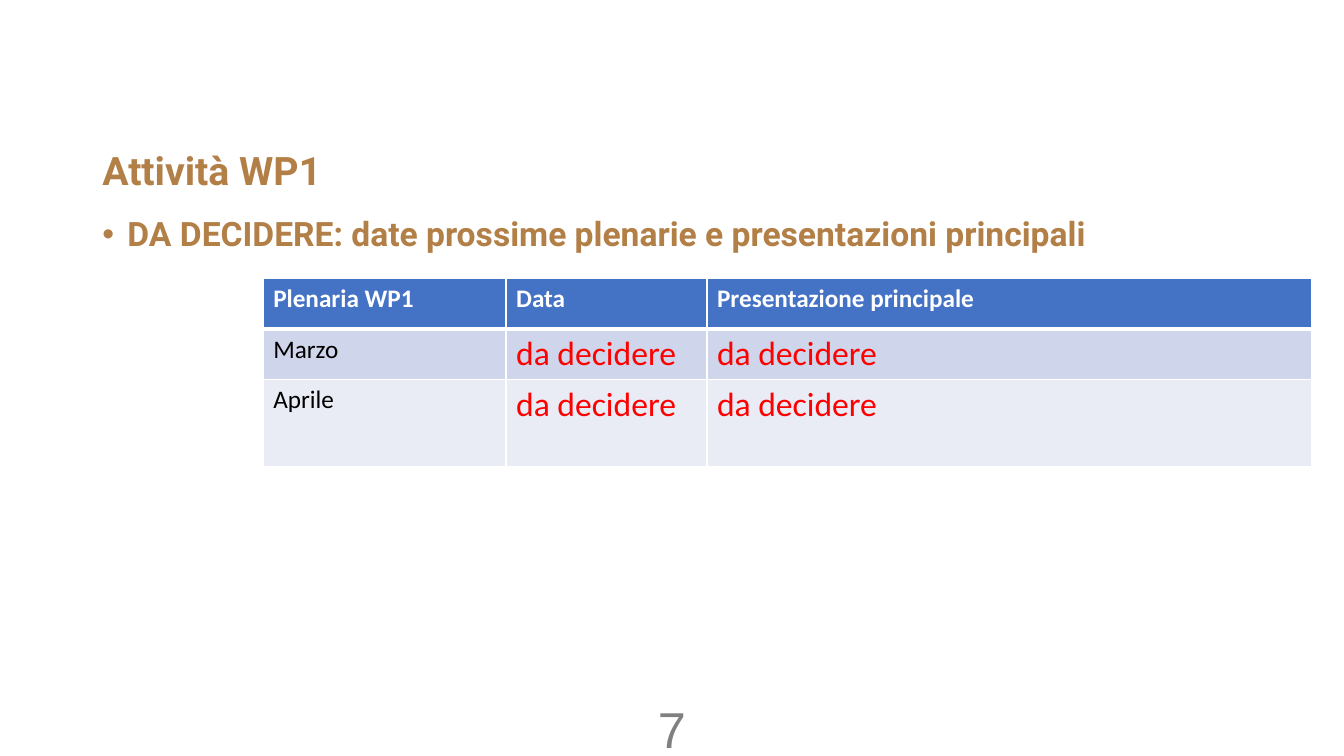
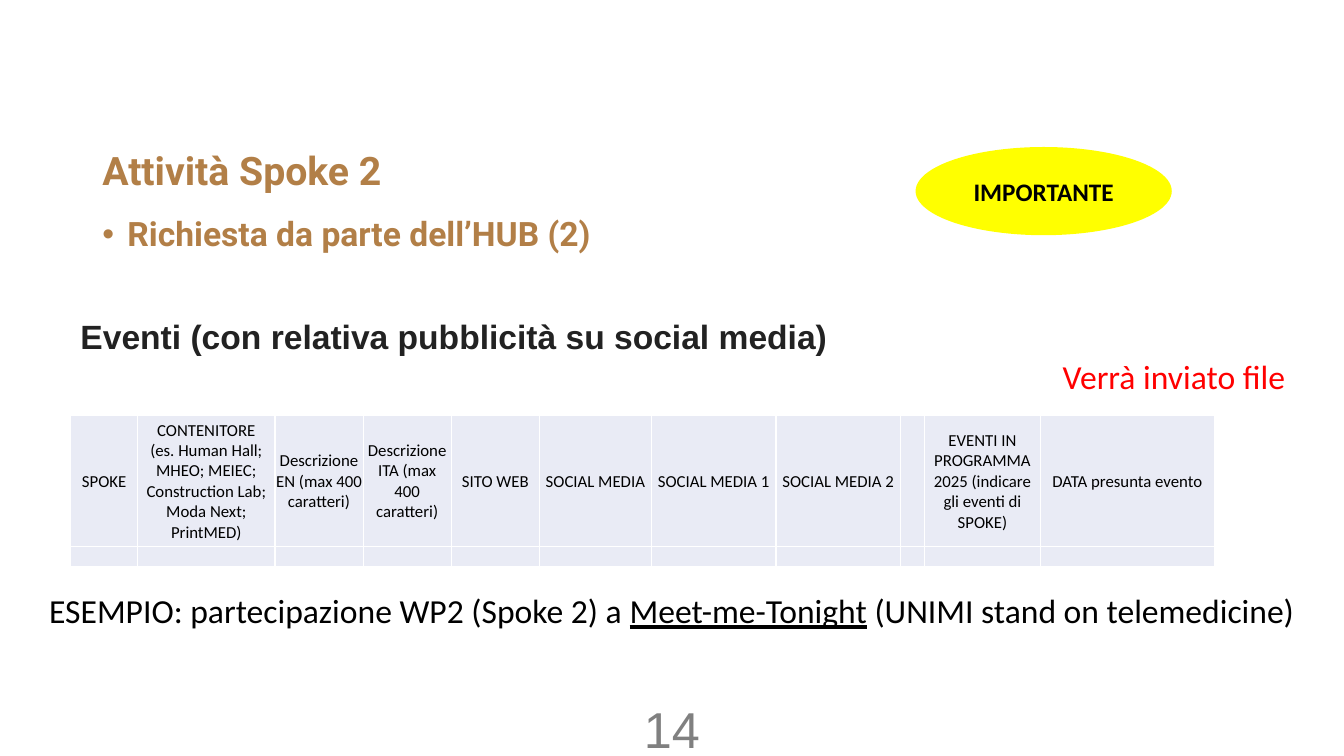
from lxml.etree import SubElement
from pptx import Presentation
from pptx.dml.color import RGBColor
from pptx.enum.shapes import MSO_SHAPE
from pptx.enum.text import MSO_ANCHOR, PP_ALIGN
from pptx.oxml.ns import qn
from pptx.util import Pt

GOLD, RED, BLACK, WHITE = "B27F47", "FF0000", "000000", "FFFFFF"
GREY, INK, YELLOW = "808080", "222222", "FFFF00"
BLUE, BAND, LIGHT = "4472C4", "CFD5EA", "E9EBF5"

TITLE = {"name": "Roboto", "size": Pt(28), "bold": True, "color": GOLD}
BULLET = TITLE | {"size": Pt(24)}
NUMBER = {"name": "Arial", "size": Pt(36), "color": GREY}
HEADING = {"name": "Arial", "size": Pt(24), "bold": True, "color": INK}
BODY = {"name": "Calibri", "size": Pt(18), "bold": False, "color": BLACK}
STRONG = BODY | {"bold": True}
HEADER = STRONG | {"color": WHITE}
LARGE = BODY | {"size": Pt(24)}
ALERT = LARGE | {"color": RED}
SMALL = BODY | {"size": Pt(12)}


def rgb(value):
    return RGBColor.from_string(value)


def set_format(font, text_format):
    for name, value in text_format.items():
        if name == "color":
            font.color.rgb = rgb(value)
        else:
            setattr(font, name, value)


def write(paragraph, text, text_format):
    for index, line in enumerate(text.split("\n")):
        if index:
            paragraph.add_line_break()
        run = paragraph.add_run()
        run.text = line
        set_format(run.font, text_format)


def add_text(slide, box, text, text_format, align=PP_ALIGN.LEFT,
             anchor=MSO_ANCHOR.TOP, wrap=True):
    frame = slide.shapes.add_textbox(*map(Pt, box)).text_frame
    frame.word_wrap = wrap
    frame.vertical_anchor = anchor
    paragraph = frame.paragraphs[0]
    paragraph.alignment = align
    write(paragraph, text, text_format)
    return paragraph


def add_bullet(paragraph):
    properties = paragraph._p.get_or_add_pPr()
    properties.set("marL", str(Pt(18)))
    properties.set("indent", str(-Pt(18)))
    SubElement(properties, qn("a:buFont"), typeface="Arial")
    SubElement(properties, qn("a:buChar"), char="•")


def add_frame(presentation, title, topic, number):
    slide = presentation.slides.add_slide(presentation.slide_layouts[6])
    heading = add_text(slide, (66, 105, 828, 43), title, TITLE)
    heading.line_spacing = 0.9
    add_text(slide, (372, 506, 216, 29), number, NUMBER,
             PP_ALIGN.CENTER, MSO_ANCHOR.MIDDLE)
    bullet = add_text(slide, (66, 152, 828, 35), topic, BULLET)
    add_bullet(bullet)
    bullet.line_spacing = 0.9
    return slide


def add_badge(slide, box, text):
    shape = slide.shapes.add_shape(MSO_SHAPE.OVAL, *map(Pt, box))
    shape.shadow.inherit = False
    shape.fill.solid()
    shape.fill.fore_color.rgb = rgb(YELLOW)
    shape.line.fill.background()
    shape.text_frame.vertical_anchor = MSO_ANCHOR.MIDDLE
    paragraph = shape.text_frame.paragraphs[0]
    paragraph.alignment = PP_ALIGN.CENTER
    write(paragraph, text, STRONG)


def set_cell(cell, color, top=1, bottom=1):
    properties = cell._tc.get_or_add_tcPr()
    for side, width in (("L", 1), ("R", 1), ("T", top), ("B", bottom)):
        line = SubElement(properties, qn(f"a:ln{side}"), w=str(Pt(width)))
        fill = SubElement(line, qn("a:solidFill"))
        SubElement(fill, qn("a:srgbClr"), val=WHITE)
    cell.fill.solid()
    cell.fill.fore_color.rgb = rgb(color)


def add_grid(slide, left, top, widths, heights, has_header):
    shape = slide.shapes.add_table(
        len(heights), len(widths), Pt(left), Pt(top),
        Pt(sum(widths)), Pt(sum(heights)))
    table = shape.table
    table.first_row = has_header
    table.horz_banding = False
    for column, width in zip(table.columns, widths):
        column.width = Pt(width)
    for row, height in zip(table.rows, heights):
        row.height = Pt(height)
    return table


def add_plenary_table(slide):
    rows = [
        ("Plenaria WP1", "Data", "Presentazione principale"),
        ("Marzo", "da decidere", "da decidere"),
        ("Aprile", "da decidere", "da decidere"),
    ]
    styles = [
        (BLUE, HEADER, HEADER, 1, 3),
        (BAND, BODY, ALERT, 3, 1),
        (LIGHT, BODY, ALERT, 1, 1),
    ]
    table = add_grid(slide, 188, 199, (173.5, 143.5, 432), (36, 36, 62), True)
    for row, texts, style in zip(table.rows, rows, styles):
        color, first_format, other_format, top, bottom = style
        for index, (cell, text) in enumerate(zip(row.cells, texts)):
            set_cell(cell, color, top, bottom)
            write(cell.text_frame.paragraphs[0], text,
                  other_format if index else first_format)


def add_event_table(slide):
    headings = (
        "SPOKE",
        "CONTENITORE\n(es. Human Hall; MHEO; MEIEC; Construction Lab; "
        "Moda Next; PrintMED)",
        "Descrizione EN (max 400 caratteri)",
        "Descrizione ITA (max 400 caratteri)",
        "SITO WEB",
        "SOCIAL MEDIA",
        "SOCIAL MEDIA 1",
        "SOCIAL MEDIA 2",
        "",
        "EVENTI IN PROGRAMMA 2025 (indicare gli eventi di SPOKE)",
        "DATA presunta evento",
    )
    widths = (48, 98, 63, 63, 63, 80, 89, 89, 17, 83, 124)
    margins = {"margin_left": Pt(0.7), "margin_right": Pt(0.7),
               "margin_top": Pt(0.7), "margin_bottom": 0}
    table = add_grid(slide, 50.4, 296.6, widths, (94, 14.4), False)
    for row, texts in zip(table.rows, (headings, [""] * len(headings))):
        for cell, text in zip(row.cells, texts):
            set_cell(cell, LIGHT)
            for name, value in margins.items():
                setattr(cell, name, value)
            cell.vertical_anchor = MSO_ANCHOR.MIDDLE
            paragraph = cell.text_frame.paragraphs[0]
            paragraph.alignment = PP_ALIGN.CENTER
            if text:
                write(paragraph, text, SMALL)
            else:
                SubElement(paragraph._p, qn("a:endParaRPr"), sz="1000")


def add_plenary_slide(presentation):
    slide = add_frame(
        presentation, "Attività WP1",
        "DA DECIDERE: date prossime plenarie e presentazioni principali", "7")
    add_plenary_table(slide)


def add_event_slide(presentation):
    slide = add_frame(presentation, "Attività Spoke 2",
                      "Richiesta da parte dell’HUB (2)", "14")
    add_badge(slide, (654, 105, 183, 63), "IMPORTANTE")
    add_text(slide, (50.4, 222, 859, 36),
             "Eventi (con relativa pubblicità su social media)", HEADING)
    add_event_table(slide)
    add_text(slide, (752, 251, 194, 36), "Verrà inviato file", ALERT)
    example = add_text(slide, (28, 418, 904, 36),
                       "ESEMPIO: partecipazione WP2 (Spoke 2) a ", LARGE,
                       wrap=False)
    write(example, "Meet-me-Tonight", LARGE | {"underline": True})
    write(example, " (UNIMI stand on telemedicine)", LARGE)


def main():
    presentation = Presentation()
    presentation.slide_width = Pt(960)
    presentation.slide_height = Pt(540)
    add_plenary_slide(presentation)
    add_event_slide(presentation)
    presentation.save("out.pptx")


if __name__ == "__main__":
    main()
